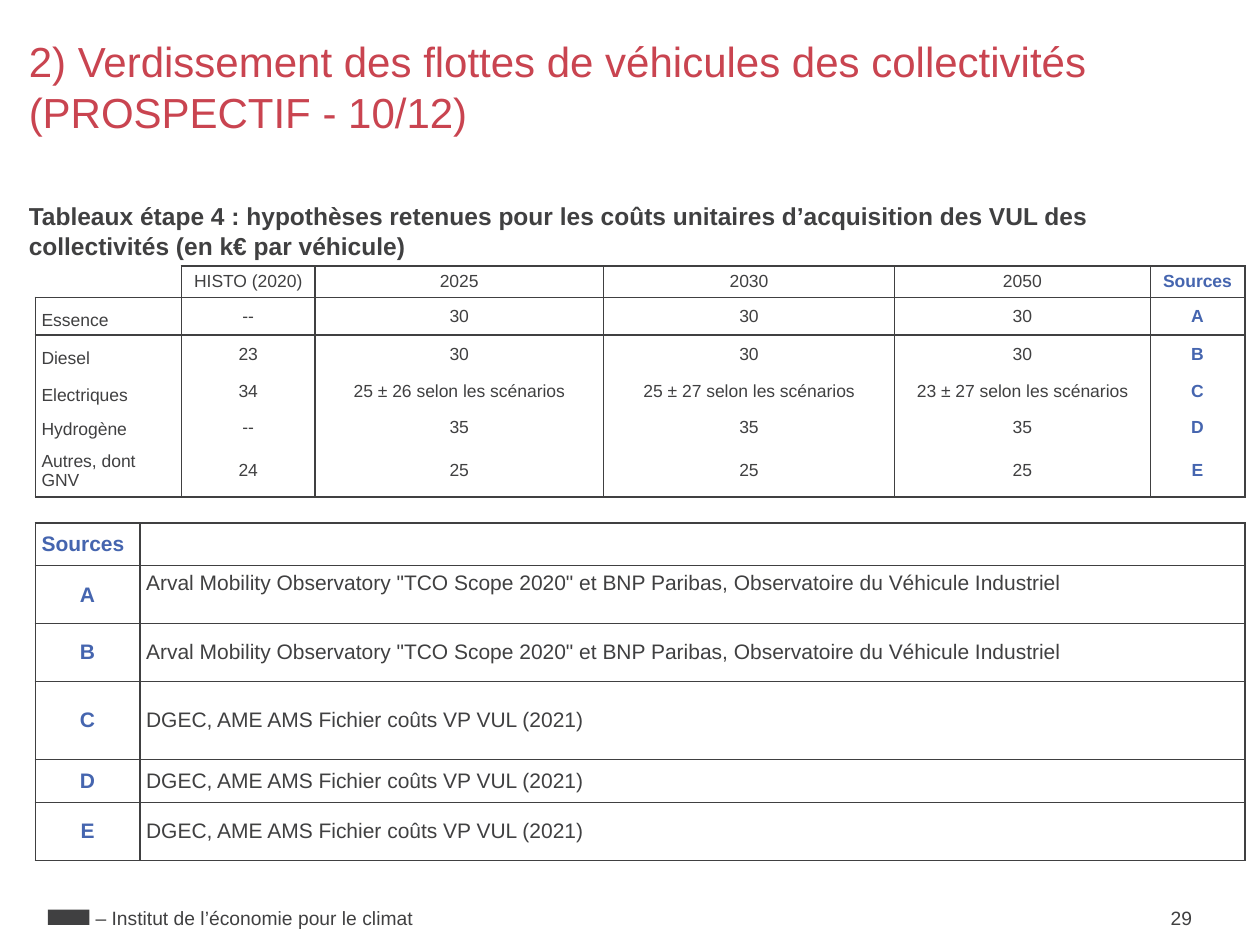
import pptx
import pptx.util
import pptx.dml.color
import pptx.enum.shapes
import pptx.enum.text
import lxml.etree

THEME = {
    "font": "Arial",
    "ink": "404041", "title": "C94450", "source": "4565AF",
    "title_size": 24, "heading_size": 14, "sources_size": 12,
    "footer_size": 11, "costs_size": 10,
    "border": 1, "side_inset": 0.05, "edge_inset": 0.04,
}

TITLE = "2) Verdissement des flottes de véhicules des collectivités\v(PROSPECTIF - 10/12)"
HEADING = ("Tableaux étape 4 : hypothèses retenues pour les coûts unitaires "
           "d’acquisition des VUL des collectivités (en k€ par véhicule)")
COSTS = [
    ("", "HISTO (2020)", "2025", "2030", "2050", "Sources"),
    ("Essence", "--", "30", "30", "30", "A"),
    ("Diesel", "23", "30", "30", "30", "B"),
    ("Electriques", "34", "25 ± 26 selon les scénarios",
     "25 ± 27 selon les scénarios", "23 ± 27 selon les scénarios", "C"),
    ("Hydrogène", "--", "35", "35", "35", "D"),
    ("Autres, dont GNV", "24", "25", "25", "25", "E"),
]
OBSERVATORY = ('Arval Mobility Observatory "TCO Scope 2020" et BNP Paribas, '
               "Observatoire du Véhicule Industriel")
DGEC = "DGEC, AME AMS Fichier coûts VP VUL (2021)"
SOURCES = [("Sources", ""), ("A", OBSERVATORY), ("B", OBSERVATORY),
           ("C", DGEC), ("D", DGEC), ("E", DGEC)]
FOOTER = "– Institut de l’économie pour le climat"
PAGE = "29"

SLIDE_WIDTH, SLIDE_HEIGHT = 10, 7.5
TEXT_LEFT, TEXT_WIDTH = 0.13, 9.45
TABLE_LEFT = 0.28
FOOTER_TOP, FOOTER_HEIGHT = 7.14, 0.29
COST_COLUMNS = [1.16, 1.06, 2.29, 2.31, 2.03, 0.75]
COST_ROWS = [0.25, 0.3, 0.3, 0.3, 0.27, 0.41]
SOURCE_COLUMNS = [0.83, 8.77]
SOURCE_ROWS = [0.34, 0.46, 0.46, 0.62, 0.34, 0.46]

inches = pptx.util.Inches
rgb = pptx.dml.color.RGBColor.from_string
ALIGN = pptx.enum.text.PP_ALIGN
ANCHOR = pptx.enum.text.MSO_ANCHOR


def write(frame, text, *, size, color="ink", bold=False, align=ALIGN.LEFT):
    paragraph = frame.paragraphs[0]
    paragraph.alignment = align
    if not text:
        end = lxml.etree.SubElement(paragraph._p, pptx.oxml.ns.qn("a:endParaRPr"))
        end.set("sz", str(size * 100))
        return
    for position, line in enumerate(text.split("\v")):
        if position:
            paragraph.add_line_break()
        run = paragraph.add_run()
        run.text = line
        run.font.name = THEME["font"]
        run.font.size = pptx.util.Pt(size)
        run.font.bold = bold
        run.font.color.rgb = rgb(THEME[color])


def add_text(slide, text, left, top, width, height, anchor=ANCHOR.TOP, **style):
    box = slide.shapes.add_textbox(*map(inches, (left, top, width, height)))
    box.text_frame.word_wrap = True
    box.text_frame.vertical_anchor = anchor
    write(box.text_frame, text, **style)


def add_emblem(slide, left, top, width, height):
    emblem = slide.shapes.add_shape(pptx.enum.shapes.MSO_SHAPE.RECTANGLE,
                                    *map(inches, (left, top, width, height)))
    emblem.shadow.inherit = False
    emblem.fill.solid()
    emblem.fill.fore_color.rgb = rgb(THEME["ink"])
    emblem.line.fill.background()


def draw_borders(cell, edges):
    qn = pptx.oxml.ns.qn
    properties = cell._tc.get_or_add_tcPr()
    for edge in edges:
        line = lxml.etree.SubElement(properties, qn("a:ln" + edge))
        line.set("w", str(pptx.util.Pt(THEME["border"])))
        fill = lxml.etree.SubElement(line, qn("a:solidFill"))
        lxml.etree.SubElement(fill, qn("a:srgbClr")).set("val", THEME["ink"])


def add_grid(slide, content, top, columns, rows, size, edges_of, style_of):
    frame = slide.shapes.add_table(len(rows), len(columns), inches(TABLE_LEFT), inches(top),
                                   inches(sum(columns)), inches(sum(rows)))
    table = frame.table
    table.first_row = table.horz_banding = False
    style = table._tbl.tblPr.find(pptx.oxml.ns.qn("a:tableStyleId"))
    style.text = "{2D5ABB26-0587-4C30-8999-92F81FD0307C}"
    for column, width in zip(table.columns, columns):
        column.width = inches(width)
    for row, height in zip(table.rows, rows):
        row.height = inches(height)
    for r, values in enumerate(content):
        for c, value in enumerate(values):
            cell = table.cell(r, c)
            cell.margin_left = cell.margin_right = inches(THEME["side_inset"])
            cell.margin_top = cell.margin_bottom = inches(THEME["edge_inset"])
            cell.vertical_anchor = ANCHOR.MIDDLE
            draw_borders(cell, edges_of(r, c))
            cell.fill.background()
            write(cell.text_frame, value, size=size, **style_of(r, c))
    return table


def cost_edges(r, c):
    if r == 0:
        return "LRTB" if c else "RB"
    return {1: "LRT", len(COST_ROWS) - 1: "LRB"}.get(r, "LR")


def cost_style(r, c):
    source = c == len(COST_COLUMNS) - 1
    return {"color": "source" if source else "ink", "bold": source,
            "align": ALIGN.CENTER if c else ALIGN.LEFT}


def source_style(r, c):
    return {"color": "ink" if c else "source", "bold": c == 0,
            "align": ALIGN.CENTER if r and c == 0 else ALIGN.LEFT}


def main():
    deck = pptx.Presentation()
    deck.slide_width, deck.slide_height = inches(SLIDE_WIDTH), inches(SLIDE_HEIGHT)
    slide = deck.slides.add_slide(deck.slide_layouts[6])

    add_text(slide, PAGE, 8.78, FOOTER_TOP, 0.78, FOOTER_HEIGHT, ANCHOR.MIDDLE,
             size=THEME["footer_size"], align=ALIGN.RIGHT)
    add_emblem(slide, 0.38, 7.22, 0.33, 0.12)
    add_text(slide, FOOTER, 0.66, FOOTER_TOP, 3.01, FOOTER_HEIGHT,
             size=THEME["footer_size"])
    add_text(slide, HEADING, TEXT_LEFT, 1.55, TEXT_WIDTH, 5.83,
             size=THEME["heading_size"], bold=True)
    add_text(slide, TITLE, TEXT_LEFT, 0.22, TEXT_WIDTH, 0.93, ANCHOR.MIDDLE,
             size=THEME["title_size"], color="title")

    costs = add_grid(slide, COSTS, 2.11, COST_COLUMNS, COST_ROWS,
                     THEME["costs_size"], cost_edges, cost_style)
    for r in range(1, len(COST_ROWS) - 1):
        costs.cell(r, 0).vertical_anchor = ANCHOR.BOTTOM

    sources = add_grid(slide, SOURCES, 4.15, SOURCE_COLUMNS, SOURCE_ROWS,
                       THEME["sources_size"], lambda r, c: "LRTB", source_style)
    sources.cell(1, 1).margin_bottom = inches(0.22)

    deck.save("out.pptx")


if __name__ == "__main__":
    main()
